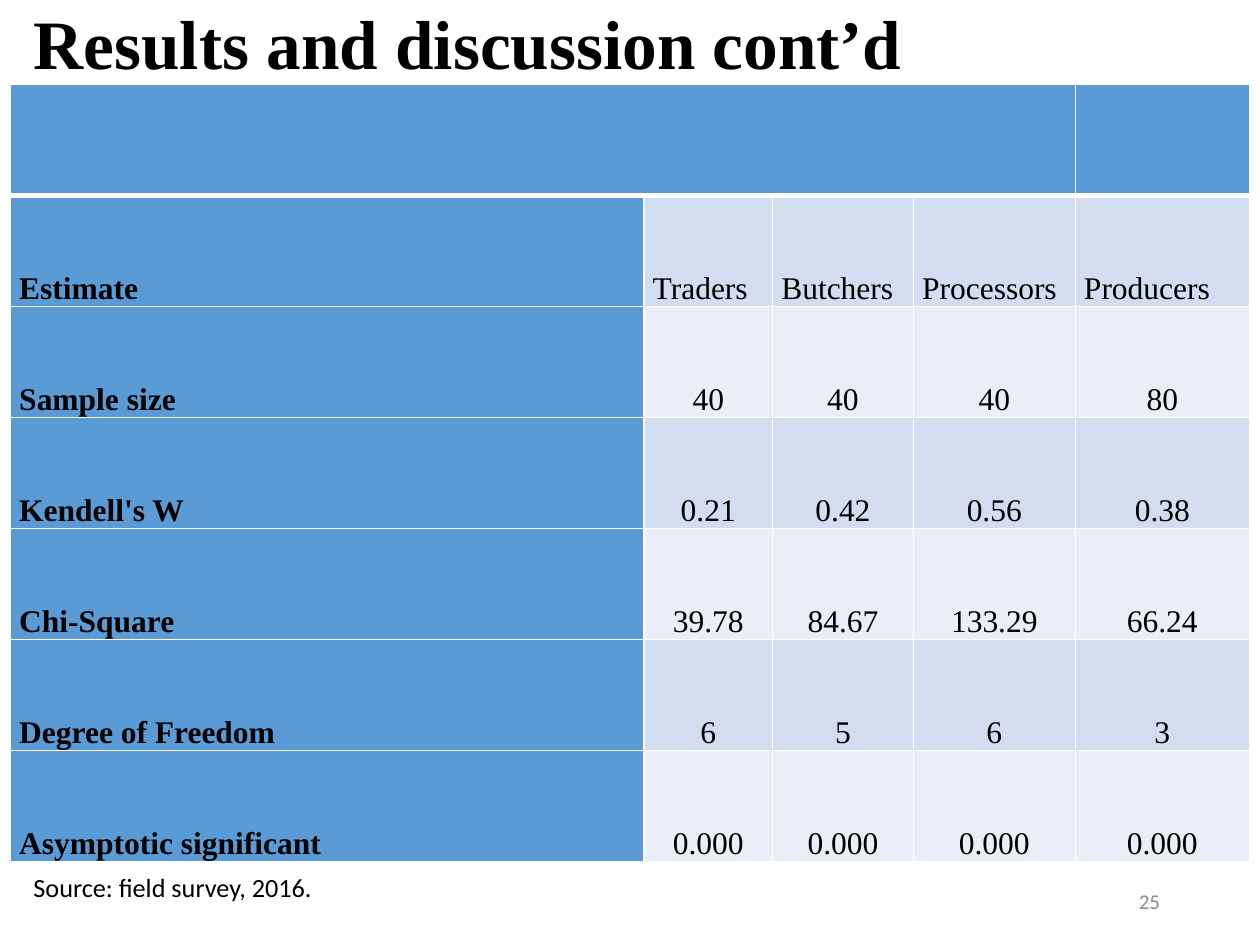
from lxml.etree import SubElement
from pptx import Presentation
from pptx.dml.color import RGBColor
from pptx.enum.text import MSO_ANCHOR as ANCHOR, PP_ALIGN as ALIGN
from pptx.oxml.ns import qn
from pptx.util import Pt

COLORS = {"text": "000000", "number": "8C8C8C", "line": "FFFFFF",
          "head": "5B9BD5", "odd": "D2DEEF", "even": "EAEFF7"}
SERIF, SANS = "Times New Roman", "Calibri"


def write(tf, text, font, size, color="text", bold=False, align=ALIGN.LEFT, spacing=1.0):
    p = tf.paragraphs[0]
    p.alignment, p.line_spacing = align, spacing
    r = p.add_run()
    r.text = text
    for name, value in {"name": font, "size": Pt(size), "bold": bold}.items():
        setattr(r.font, name, value)
    r.font.color.rgb = RGBColor.from_string(COLORS[color])


def add_border(cell, side, width):
    ln = SubElement(cell._tc.get_or_add_tcPr(), qn(f"a:ln{side}"), w=str(Pt(width)))
    fill = SubElement(ln, qn("a:solidFill"))
    SubElement(fill, qn("a:srgbClr"), val=COLORS["line"])


prs = Presentation()
prs.slide_width, prs.slide_height = Pt(720), Pt(540)
s = prs.slides.add_slide(prs.slide_layouts[5])

# Title
title = s.shapes.title
box = {"left": Pt(12), "top": Pt(12), "width": Pt(690), "height": Pt(30)}
for name, value in box.items():
    setattr(title, name, value)
title.text_frame.vertical_anchor = ANCHOR.MIDDLE
write(title.text_frame, "Results and discussion cont’d", SERIF, 39.6, bold=True, spacing=0.9)

# Table: the first row is an empty header band
rows = [
    ["", "", "", "", ""],
    ["Estimate", "Traders", "Butchers", "Processors", "Producers"],
    ["Sample size", "40", "40", "40", "80"],
    ["Kendell's W", "0.21", "0.42", "0.56", "0.38"],
    ["Chi-Square", "39.78", "84.67", "133.29", "66.24"],
    ["Degree of Freedom", "6", "5", "6", "3"],
    ["Asymptotic significant", "0.000", "0.000", "0.000", "0.000"],
]
col_widths = [362, 73.5, 80.5, 92.5, 99.5]
row_height = 63.45
table = s.shapes.add_table(len(rows), len(col_widths), Pt(6), Pt(48.2),
                           Pt(sum(col_widths)), Pt(row_height * len(rows))).table
for col, width in zip(table.columns, col_widths):
    col.width = Pt(width)

for i, row in enumerate(rows):
    table.rows[i].height = Pt(row_height)
    for j, text in enumerate(row):
        cell = table.cell(i, j)
        cell_format = {"margin_left": Pt(5), "margin_right": Pt(5), "margin_top": 0,
                       "margin_bottom": 0, "vertical_anchor": ANCHOR.BOTTOM}
        for name, value in cell_format.items():
            setattr(cell, name, value)
        for side in "LRTB":
            heavy = (i, side) in [(0, "B"), (1, "T")]
            add_border(cell, side, 3 if heavy else 1)
        band = "head" if i == 0 or j == 0 else "odd" if i % 2 else "even"
        cell.fill.solid()
        cell.fill.fore_color.rgb = RGBColor.from_string(COLORS[band])
        if text:
            align = ALIGN.CENTER if i > 1 and j > 0 else ALIGN.LEFT
            write(cell.text_frame, text, SERIF, 18, bold=j == 0, align=align, spacing=1.07)
table.cell(0, 0).merge(table.cell(0, 3))

# Source line and slide number
notes = [
    ("Source: field survey, 2016.", (12, 492, 480, 30), 15, "text", ALIGN.LEFT),
    ("25", (508, 500.5, 162, 28.8), 12, "number", ALIGN.RIGHT),
]
for text, place, size, color, align in notes:
    tf = s.shapes.add_textbox(*map(Pt, place)).text_frame
    tf.word_wrap, tf.vertical_anchor = True, ANCHOR.MIDDLE
    write(tf, text, SANS, size, color, align=align)

prs.save("out.pptx")
